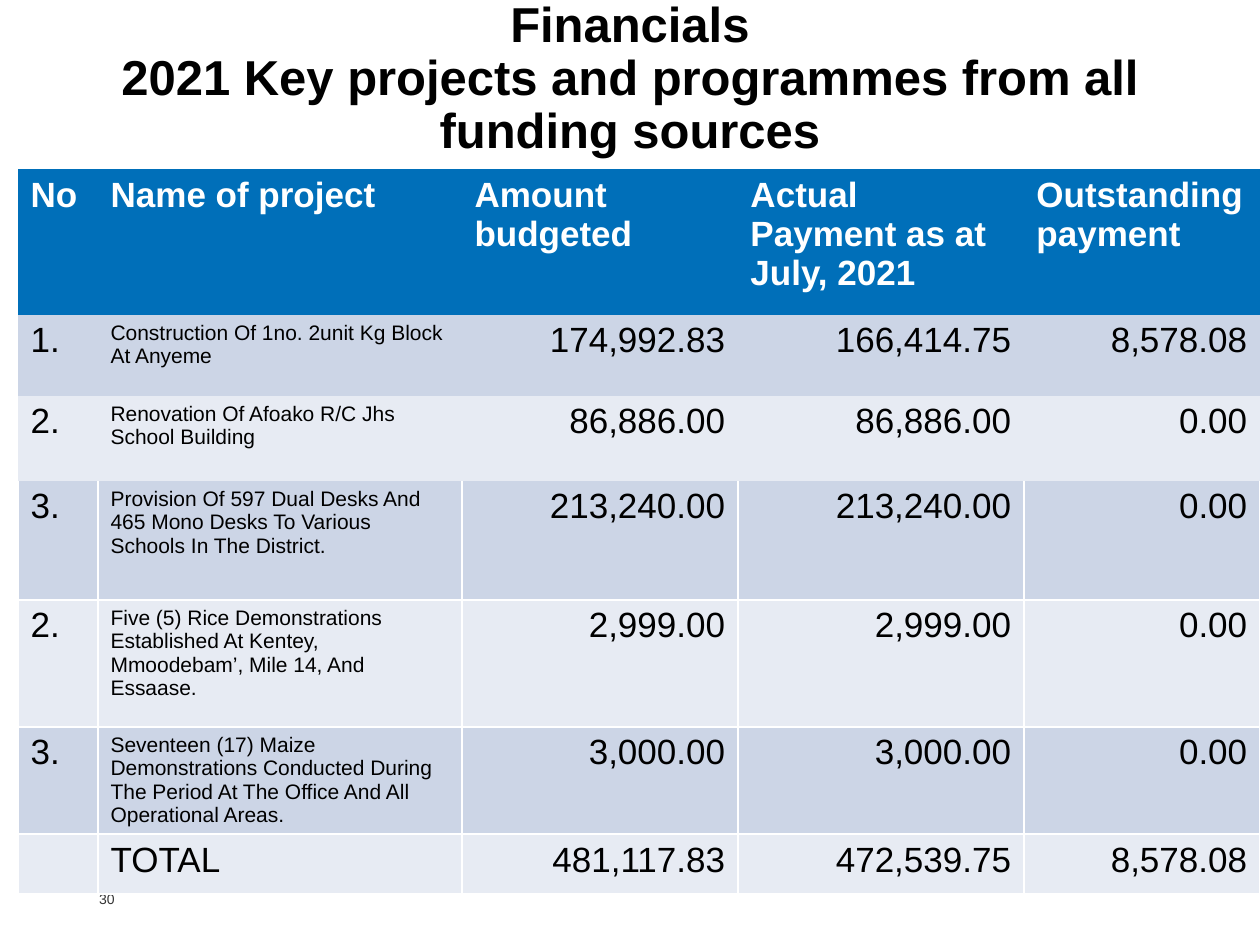
from lxml.etree import SubElement
from pptx import Presentation
from pptx.dml.color import RGBColor
from pptx.enum.text import MSO_ANCHOR, PP_ALIGN
from pptx.oxml.ns import qn
from pptx.util import Pt

# Content
TITLE = "Financials\v2021 Key projects and programmes from all funding sources"
PAGE_NUMBER = "30"
HEADER = ["No", "Name of project", "Amount budgeted",
          "Actual Payment as at July, 2021", "Outstanding\npayment"]
PROJECTS = [
    ["1.", "Construction Of 1no. 2unit Kg Block At Anyeme",
     "174,992.83", "166,414.75", "8,578.08"],
    ["2.", "Renovation Of Afoako R/C Jhs School Building",
     "86,886.00", "86,886.00", "0.00"],
    ["3.", "Provision Of 597 Dual Desks And 465 Mono Desks To Various Schools In The District.",
     "213,240.00", "213,240.00", "0.00"],
    ["2.", "Five (5) Rice Demonstrations Established At Kentey, Mmoodebam’, Mile 14, And Essaase.",
     "2,999.00", "2,999.00", "0.00"],
    ["3.", "Seventeen (17) Maize Demonstrations Conducted During The Period At The Office "
     "And All Operational Areas.", "3,000.00", "3,000.00", "0.00"],
]
TOTAL = ["", "TOTAL", "481,117.83", "472,539.75", "8,578.08"]

# Theme and layout, lengths in px
THEME = {
    "font": "Arial", "text": "000000", "white": "FFFFFF", "number": "333333",
    "header": "006FB9", "bands": ["CCD5E6", "E7EBF3"],
    "title_size": 28, "table_size": 20, "project_size": 12, "number_size": 8,
}
EMU_PER_PX = 914400 // 126
COLUMNS = [80, 364, 276, 286, 236]
ROWS = [146, 81, 85, 119, 127, 106, 60]
TABLE_LEFT, TABLE_TOP = 18, 169
FIRST_RULED_ROW = 3
NO_STYLE = "{2D5ABB26-0587-4C30-8999-92F81FD0307C}"


def px(value):
    return value * EMU_PER_PX


def style_text(frame, size, color, bold=False, align=PP_ALIGN.LEFT):
    for para in frame.paragraphs:
        para.alignment = align
        for span in para.runs:
            span.font.name = THEME["font"]
            span.font.size = Pt(size)
            span.font.bold = bold
            span.font.color.rgb = RGBColor.from_string(color)


def add_text(page, text, left, top, width, height, **style):
    box = page.shapes.add_textbox(px(left), px(top), px(width), px(height))
    frame = box.text_frame
    frame.word_wrap = True
    frame.vertical_anchor = MSO_ANCHOR.TOP
    frame.margin_left = frame.margin_right = frame.margin_top = frame.margin_bottom = 0
    frame.text = text
    style_text(frame, **style)
    return frame


def add_borders(cell, sides):
    properties = cell._tc.get_or_add_tcPr()
    for position, side in enumerate(sides):
        line = SubElement(properties, qn("a:ln" + side), w=str(Pt(1)))
        fill = SubElement(line, qn("a:solidFill"))
        SubElement(fill, qn("a:srgbClr"), val=THEME["white"])
        properties.remove(line)
        properties.insert(position, line)


def fill_cell(cell, text, row, column):
    is_header = row == 0
    is_project = column == 1 and 0 < row <= len(PROJECTS)
    is_amount = column > 1 and not is_header
    color = THEME["header"] if is_header else THEME["bands"][(row - 1) % 2]
    cell.fill.solid()
    cell.fill.fore_color.rgb = RGBColor.from_string(color)
    if is_project:
        cell.margin_bottom = 0  # keeps four-line names within the row height
    if text:
        cell.text_frame.text = text
        style_text(cell.text_frame,
                   size=THEME["project_size" if is_project else "table_size"],
                   color=THEME["white" if is_header else "text"],
                   bold=is_header,
                   align=PP_ALIGN.RIGHT if is_amount else PP_ALIGN.LEFT)
    if row >= FIRST_RULED_ROW:
        add_borders(cell, "LRB" if row == FIRST_RULED_ROW else "LRTB")


def add_project_table(page):
    content = [HEADER, *PROJECTS, TOTAL]
    frame = page.shapes.add_table(len(ROWS), len(COLUMNS), px(TABLE_LEFT), px(TABLE_TOP),
                                  px(sum(COLUMNS)), px(sum(ROWS)))
    table = frame.table
    table._tbl.tblPr.find(qn("a:tableStyleId")).text = NO_STYLE
    for column, width in zip(table.columns, COLUMNS):
        column.width = px(width)
    for row, height in zip(table.rows, ROWS):
        row.height = px(height)
    for row, texts in enumerate(content):
        for column, text in enumerate(texts):
            fill_cell(table.cell(row, column), text, row, column)


def main():
    deck = Presentation()
    deck.slide_width, deck.slide_height = px(1260), px(945)
    page = deck.slides.add_slide(deck.slide_layouts[6])

    # Page number, title and table
    add_text(page, PAGE_NUMBER, 99, 891, 57, 25,
             size=THEME["number_size"], color=THEME["number"])
    title = add_text(page, TITLE, 63, 0, 1134, 169, size=THEME["title_size"],
                     color=THEME["text"], bold=True, align=PP_ALIGN.CENTER)
    title.paragraphs[0].line_spacing = 0.9
    add_project_table(page)
    deck.save("out.pptx")


if __name__ == "__main__":
    main()
